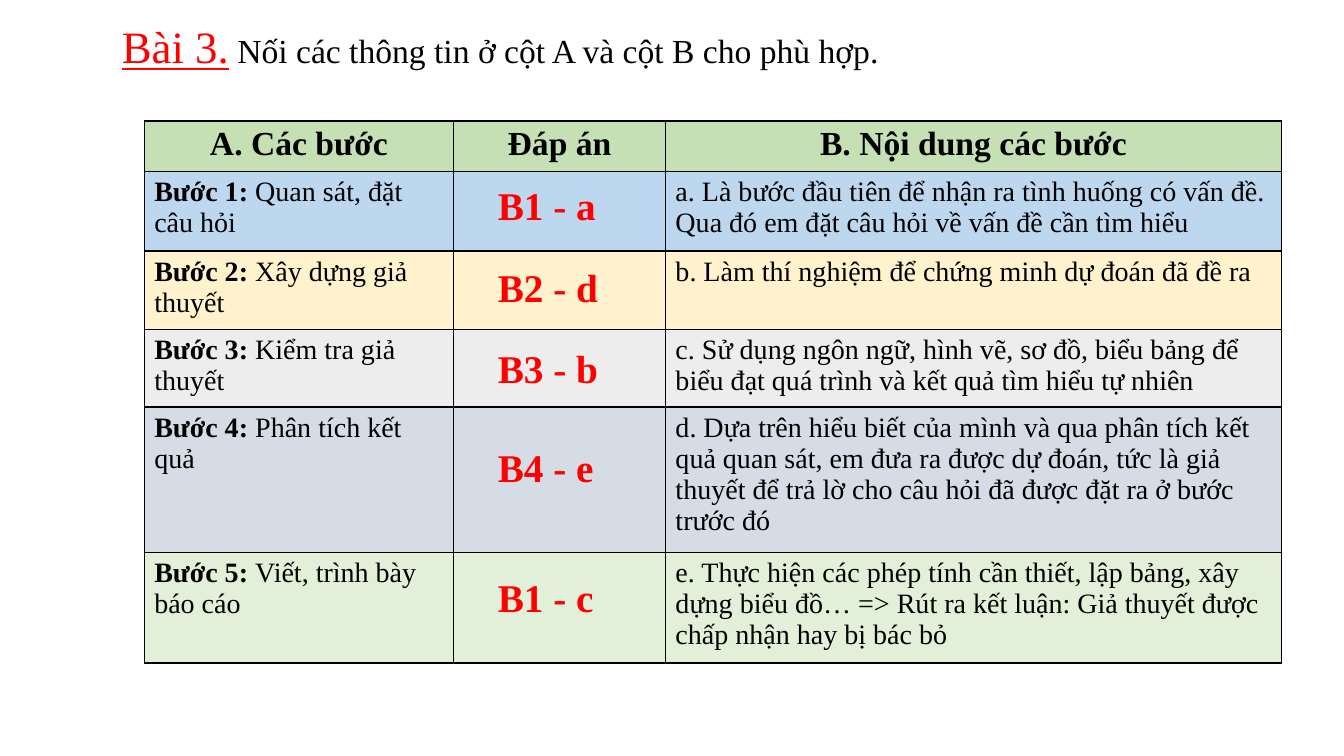
from lxml import etree
from pptx import Presentation
from pptx.dml.color import RGBColor
from pptx.enum.text import MSO_AUTO_SIZE, PP_ALIGN
from pptx.oxml.ns import qn
from pptx.util import Inches, Pt

CENTER, LEFT = PP_ALIGN.CENTER, PP_ALIGN.LEFT
GROW = MSO_AUTO_SIZE.SHAPE_TO_FIT_TEXT
FONT = "Times New Roman"
BLACK = RGBColor(0x00, 0x00, 0x00)
RED = RGBColor(0xFF, 0x00, 0x00)
HEAD_FILL = RGBColor(0xC5, 0xE0, 0xB4)
BLUE = RGBColor(0xBD, 0xD7, 0xEE)
CREAM = RGBColor(0xFF, 0xF2, 0xCC)
GRAY = RGBColor(0xED, 0xED, 0xED)
SLATE = RGBColor(0xD6, 0xDC, 0xE5)
GREEN = RGBColor(0xE2, 0xF0, 0xD9)

# Text formats
TITLE = {"size": Pt(32), "underline": True, "color": RED}
TASK = {"size": Pt(24), "color": BLACK}
HEAD = {"size": Pt(24), "bold": True, "color": BLACK}
STEP = {"size": Pt(20), "bold": True, "color": BLACK}
BODY = {"size": Pt(20), "bold": False, "color": BLACK}
ANSWER = {"size": Pt(28), "bold": True, "color": RED}

# Table content: fill, row height, step, what it does, description
HEADS = ["A. Các bước", "Đáp án", "B. Nội dung các bước"]
COLS = [3.07, 2.1, 6.11]
HEAD_H = 0.5
STEPS = [
    (BLUE, 0.79, "Bước 1: ", "Quan sát, đặt câu hỏi",
     "a. Là bước đầu tiên để nhận ra tình huống có vấn đề. "
     "Qua đó em đặt câu hỏi về vấn đề cần tìm hiểu"),
    (CREAM, 0.78, "Bước 2: ", "Xây dựng giả thuyết",
     "b. Làm thí nghiệm để chứng minh dự đoán đã đề ra"),
    (GRAY, 0.76, "Bước 3: ", "Kiểm tra giả thuyết",
     "c. Sử dụng ngôn ngữ, hình vẽ, sơ đồ, biểu bảng để "
     "biểu đạt quá trình và kết quả tìm hiểu tự nhiên"),
    (SLATE, 1.44, "Bước 4: ", "Phân tích kết quả",
     "d. Dựa trên hiểu biết của mình và qua phân tích kết quả quan sát, "
     "em đưa ra được dự đoán, tức là giả thuyết để trả lờ cho câu hỏi "
     "đã được đặt ra ở bước trước đó"),
    (GREEN, 1.1, "Bước 5: ", "Viết, trình bày báo cáo",
     "e. Thực hiện các phép tính cần thiết, lập bảng, xây dựng biểu đồ… "
     "=> Rút ra kết luận: Giả thuyết được chấp nhận hay bị bác bỏ"),
]

# Answers with their drop below the top of the table
ANSWERS = [("B1 - a", 0.55), ("B2 - d", 1.36), ("B3 - b", 2.17),
           ("B4 - e", 3.15), ("B1 - c", 4.44)]


def write(frame, runs, align=LEFT):
    para = frame.paragraphs[0]
    para.alignment = align
    for text, style in runs:
        run = para.add_run()
        run.text = text
        run.font.name = FONT
        for key, value in style.items():
            if key == "color":
                run.font.color.rgb = value
            else:
                setattr(run.font, key, value)


def add_text(slide, box, runs, wrap):
    frame = slide.shapes.add_textbox(*map(Inches, box)).text_frame
    frame.word_wrap = wrap
    frame.auto_size = GROW
    write(frame, runs)


def set_cell(cell, fill, runs, align=LEFT):
    # Borders come before the fill in the cell properties
    props = cell._tc.get_or_add_tcPr()
    for side in ("a:lnL", "a:lnR", "a:lnT", "a:lnB"):
        line = etree.SubElement(props, qn(side), w=str(Pt(1)))
        paint = etree.SubElement(line, qn("a:solidFill"))
        etree.SubElement(paint, qn("a:srgbClr"), val=str(BLACK))
    cell.fill.solid()
    cell.fill.fore_color.rgb = fill
    write(cell.text_frame, runs, align)


def add_steps(slide, left, top):
    heights = [HEAD_H] + [step[1] for step in STEPS]
    box = map(Inches, (left, top, sum(COLS), sum(heights)))
    table = slide.shapes.add_table(len(heights), len(COLS), *box).table
    for col, width in zip(table.columns, COLS):
        col.width = Inches(width)
    for row, height in zip(table.rows, heights):
        row.height = Inches(height)

    for col, text in enumerate(HEADS):
        set_cell(table.cell(0, col), HEAD_FILL, [(text, HEAD)], CENTER)
    for row, (fill, _, label, name, detail) in enumerate(STEPS, 1):
        cells = [[(label, STEP), (name, BODY)], [], [(detail, BODY)]]
        for col, runs in enumerate(cells):
            set_cell(table.cell(row, col), fill, runs)


def add_answers(slide, left, top):
    for text, drop in ANSWERS:
        add_text(slide, (left, top + drop, 1.2, 0.57), [(text, ANSWER)], False)


def main():
    deck = Presentation()
    deck.slide_width, deck.slide_height = Inches(13.33), Inches(7.5)
    slide = deck.slides.add_slide(deck.slide_layouts[6])
    # Heading
    add_text(slide, (1.11, 0.14, 10.74, 0.64),
             [("Bài 3.", TITLE),
              (" Nối các thông tin ở cột A và cột B cho phù hợp.", TASK)], True)
    # Matching table and answers over its middle column
    add_steps(slide, 1.43, 1.2)
    add_answers(slide, 4.84, 1.2)
    deck.save("out.pptx")


if __name__ == "__main__":
    main()
